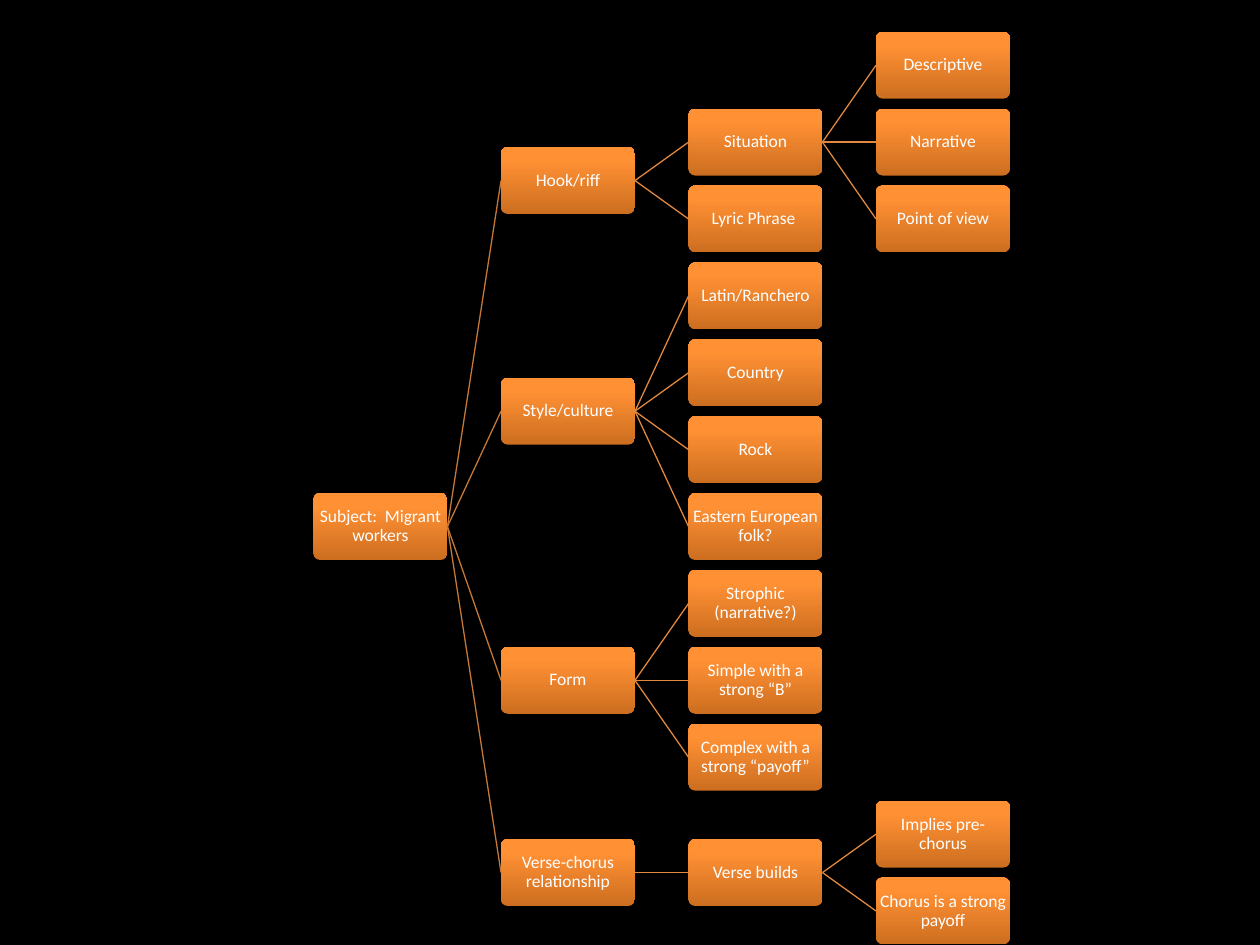
from dataclasses import dataclass

from lxml import etree
from pptx import Presentation
from pptx.dml.color import RGBColor
from pptx.enum.shapes import MSO_CONNECTOR, MSO_SHAPE
from pptx.enum.text import MSO_ANCHOR, PP_ALIGN
from pptx.oxml.ns import qn
from pptx.util import Cm, Pt

ROUNDED = MSO_SHAPE.ROUNDED_RECTANGLE
STRAIGHT = MSO_CONNECTOR.STRAIGHT
MIDDLE = MSO_ANCHOR.MIDDLE
CENTER = PP_ALIGN.CENTER
LEFT_SITE, RIGHT_SITE = 1, 3


@dataclass(frozen=True)
class Theme:
    background: str = "000000"
    text: str = "FFFFFF"
    root_line: str = "C67838"
    branch_line: str = "E08840"
    # Gradient stops, from the bottom of a node to its top
    node_stops: tuple = ((0, "CC6E20"), (80, "FF9034"), (100, "FF9136"))
    font: str = "Calibri"
    size: float = 10
    line_width: float = 0.75


THEME = Theme()

# Node size and the distance between columns and rows, in cm
NODE_W, NODE_H = 2.7, 1.35
COLUMN_STEP, ROW_STEP = 3.78, 1.55

# Each node is a label and its children
SONG_TREE = ("Subject:  Migrant workers", [
    ("Hook/riff", [
        ("Situation", [
            ("Descriptive", []),
            ("Narrative", []),
            ("Point of view", []),
        ]),
        ("Lyric Phrase ", []),
    ]),
    ("Style/culture", [
        ("Latin/Ranchero", []),
        ("Country", []),
        ("Rock", []),
        ("Eastern European folk?", []),
    ]),
    ("Form", [
        ("Strophic (narrative?)", []),
        ("Simple with a strong “B”", []),
        ("Complex with a strong “payoff”", []),
    ]),
    ("Verse-chorus relationship", [
        ("Verse builds", [
            ("Implies pre-chorus", []),
            ("Chorus is a strong payoff", []),
        ]),
    ]),
])


def fill_gradient(sp):
    sp.fill.gradient()
    sp.fill.gradient_angle = 90
    stops = sp._element.spPr.find(qn("a:gradFill")).find(qn("a:gsLst"))
    for gs in list(stops):
        stops.remove(gs)
    for percent, color in THEME.node_stops:
        gs = etree.SubElement(stops, qn("a:gs"), pos=str(percent * 1000))
        etree.SubElement(gs, qn("a:srgbClr"), val=color)


def add_node(slide, left, top, label):
    sp = slide.shapes.add_shape(ROUNDED, Cm(left), Cm(top),
                                Cm(NODE_W), Cm(NODE_H))
    sp.adjustments[0] = 0.1
    sp.shadow.inherit = False
    sp.line.fill.background()
    fill_gradient(sp)

    tf = sp.text_frame
    tf.word_wrap = True
    tf.vertical_anchor = MIDDLE
    tf.margin_left = tf.margin_right = Cm(0.03)
    tf.margin_top = tf.margin_bottom = Cm(0.03)
    p = tf.paragraphs[0]
    p.alignment = CENTER
    p.line_spacing = 0.9
    r = p.add_run()
    r.text = label
    r.font.name = THEME.font
    r.font.size = Pt(THEME.size)
    r.font.color.rgb = RGBColor.from_string(THEME.text)
    return sp


def add_link(slide, parent, child, color):
    link = slide.shapes.add_connector(STRAIGHT, 0, 0, 0, 0)
    link.begin_connect(parent, RIGHT_SITE)
    link.end_connect(child, LEFT_SITE)
    link.line.color.rgb = RGBColor.from_string(color)
    link.line.width = Pt(THEME.line_width)
    etree.SubElement(link._element.spPr, qn("a:effectLst"))


def add_tree(slide, left, top, tree):
    """Stack leaves down each column and centre parents on their children."""
    next_row = [0, 0, 0, 0]

    def place(node, depth, floor):
        label, children = node
        placed = []
        for child in children:
            # Every main branch starts below the whole previous one
            start = max(next_row) if depth == 0 else floor
            placed.append(place(child, depth + 1, start))
        if placed:
            row = (placed[0][1] + placed[-1][1]) / 2
        else:
            row = max(floor, next_row[depth])
        next_row[depth] = row + 1

        sp = add_node(slide, left + depth * COLUMN_STEP,
                      top + row * ROW_STEP, label)
        color = THEME.branch_line if depth else THEME.root_line
        for child_sp, _ in placed:
            add_link(slide, sp, child_sp, color)
        return sp, row

    place(tree, 0, 0)


def main():
    prs = Presentation()
    prs.slide_width, prs.slide_height = Cm(25.4), Cm(19.05)
    slide = prs.slides.add_slide(prs.slide_layouts[6])
    bg = slide.background.fill
    bg.solid()
    bg.fore_color.rgb = RGBColor.from_string(THEME.background)

    # Song planning tree
    add_tree(slide, 6.32, 0.64, SONG_TREE)
    prs.save("out.pptx")


if __name__ == "__main__":
    main()
